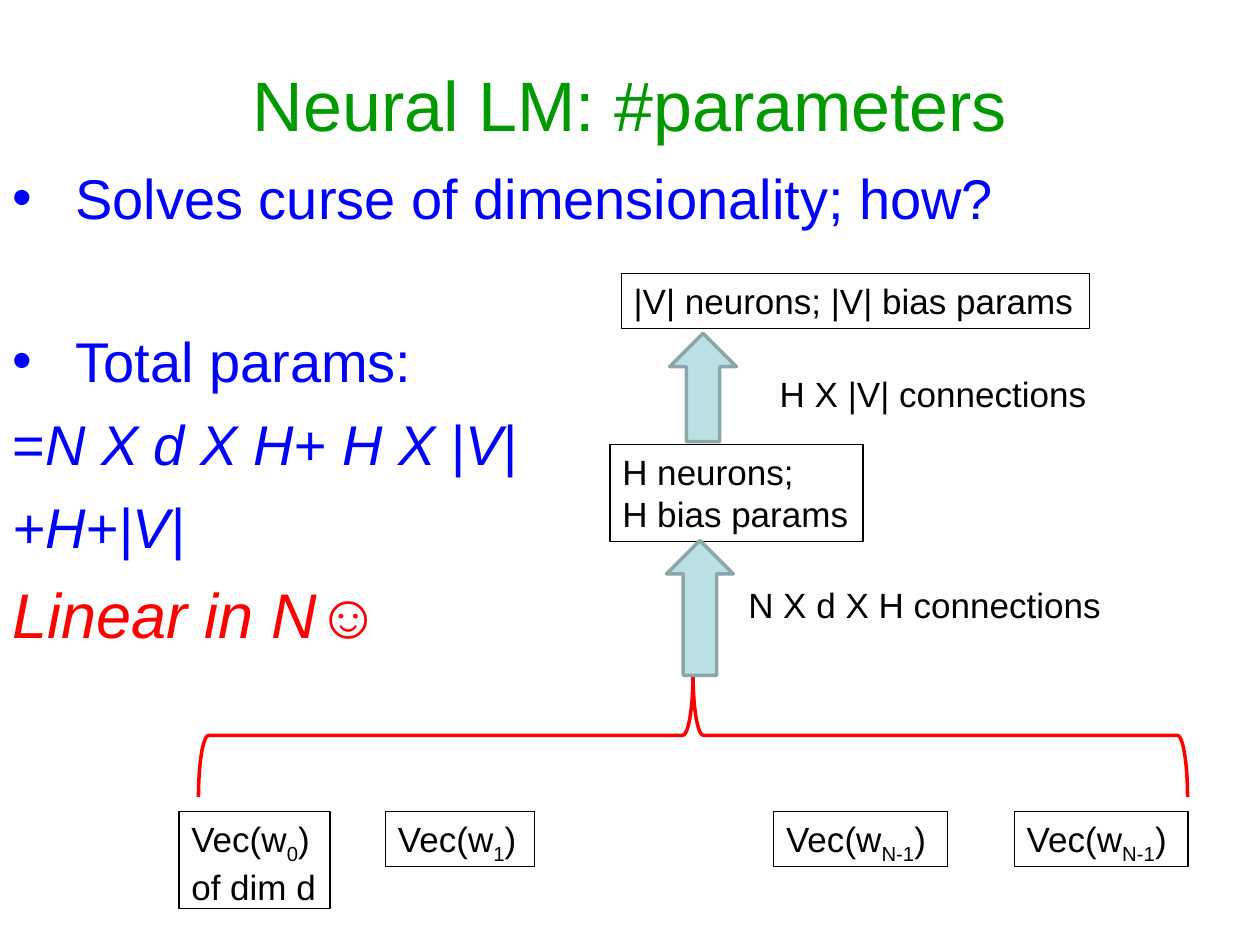
from lxml import etree
from pptx import Presentation
from pptx.dml.color import RGBColor
from pptx.enum.shapes import MSO_SHAPE as Shape
from pptx.enum.text import MSO_ANCHOR as Anchor, MSO_AUTO_SIZE as AutoSize, PP_ALIGN as Align
from pptx.oxml.ns import qn
from pptx.util import Inches, Pt

COLORS = {"title": "009900", "body": "0000FF", "accent": "FF0000",
          "text": "000000", "arrow": "BBE0E3", "arrow_edge": "8AA6A8"}


def add_run(paragraph, text, size, color, italic=None, baseline=None):
    run = paragraph.add_run()
    run.text = text
    run.font.name = "Arial"
    run.font.size = Pt(size)
    run.font.italic = italic
    run.font.color.rgb = RGBColor.from_string(COLORS[color])
    if baseline:
        run.font._element.set("baseline", str(baseline))


def add_label(frame, lines):
    frame.word_wrap = False
    frame.auto_size = AutoSize.SHAPE_TO_FIT_TEXT
    frame.vertical_anchor = Anchor.TOP
    for index, line in enumerate(lines):
        paragraph = frame.add_paragraph() if index else frame.paragraphs[0]
        paragraph.alignment = Align.LEFT
        for text, baseline in line:
            add_run(paragraph, text, 20, "text", baseline=baseline)


prs = Presentation()
prs.slide_width, prs.slide_height = Inches(10), Inches(7.5)
slide = prs.slides.add_slide(prs.slide_layouts[6])
shapes = slide.shapes

title = shapes.add_textbox(Inches(0.5), Inches(0.4), Inches(9), Inches(0.85)).text_frame
title.word_wrap = True
title.vertical_anchor = Anchor.MIDDLE
title.paragraphs[0].alignment = Align.CENTER
add_run(title.paragraphs[0], "Neural LM: #parameters", 40, "title")

body = shapes.add_textbox(Inches(0), Inches(1.25), Inches(10), Inches(1.31)).text_frame
body.word_wrap = True
points = [
    (True, 2.5, [("Solves curse of dimensionality; how?", 32, "body", False)]),
    (True, 54.6, [("Total params:", 32, "body", False)]),
    (False, 9, [("=", 32, "body", False), ("N X d X H+ H X |V|", 32, "body", True)]),
    (False, 9, [("+H+|V|", 32, "body", True)]),
    (False, 9, [("Linear in N☺", 36, "accent", True)]),
]
for index, (bulleted, space, runs) in enumerate(points):
    paragraph = body.add_paragraph() if index else body.paragraphs[0]
    paragraph.space_before = Pt(space)
    if bulleted:
        properties = paragraph._p.get_or_add_pPr()
        properties.set("marL", str(Inches(0.5)))
        properties.set("indent", str(Inches(-0.5)))
        bullet_color = etree.SubElement(properties, qn("a:buClr"))
        etree.SubElement(bullet_color, qn("a:srgbClr"), val=COLORS["body"])
        etree.SubElement(properties, qn("a:buFont"), typeface="Arial")
        etree.SubElement(properties, qn("a:buChar"), char="•")
    for text, size, color, italic in runs:
        add_run(paragraph, text, size, color, italic)

layers = [
    (4.84, 3.53, 2.01, 0.77, [[("H neurons;", None)], [("H bias params", None)]]),
    (4.93, 2.17, 3.72, 0.44, [[("|V| neurons; |V| bias params", None)]]),
]
vectors = [(1.42, 1.2, 0.77, "0", "of dim d"), (3.06, 1.18, 0.44, "1", None),
           (6.14, 1.38, 0.44, "N-1", None), (8.05, 1.38, 0.44, "N-1", None)]
for left, width, height, subscript, note in vectors:
    lines = [[("Vec(w", None), (subscript, -25000), (")", None)]]
    if note:
        lines.append([(note, None)])
    layers.append((left, 6.44, width, height, lines))

for left, top, width, height, lines in layers:
    box = shapes.add_shape(Shape.RECTANGLE, Inches(left), Inches(top), Inches(width), Inches(height))
    box.shadow.inherit = False
    box.fill.background()
    box.line.color.rgb = RGBColor.from_string(COLORS["text"])
    box.line.width = Pt(0.75)
    add_label(box.text_frame, lines)

flow = [
    (Shape.RIGHT_BRACE, 5.01, 1.91, 0.98, 7.85, None, "accent"),
    (Shape.RIGHT_ARROW, 5.02, 4.56, 1.07, 0.53, "arrow", "arrow_edge"),
    (Shape.RIGHT_ARROW, 5.15, 2.81, 0.86, 0.53, "arrow", "arrow_edge"),
]
for kind, left, top, width, height, fill, edge in flow:
    link = shapes.add_shape(kind, Inches(left), Inches(top), Inches(width), Inches(height))
    link.rotation = 270
    link.shadow.inherit = False
    if fill:
        link.fill.solid()
        link.fill.fore_color.rgb = RGBColor.from_string(COLORS[fill])
    else:
        link.fill.background()
    link.line.color.rgb = RGBColor.from_string(COLORS[edge])
    link.line.width = Pt(2)

for left, top, width, text in [(5.84, 4.58, 3.02, "N X d X H connections"),
                               (6.09, 2.91, 2.66, "H X |V| connections")]:
    caption = shapes.add_textbox(Inches(left), Inches(top), Inches(width), Inches(0.44))
    add_label(caption.text_frame, [[(text, None)]])

prs.save("out.pptx")
